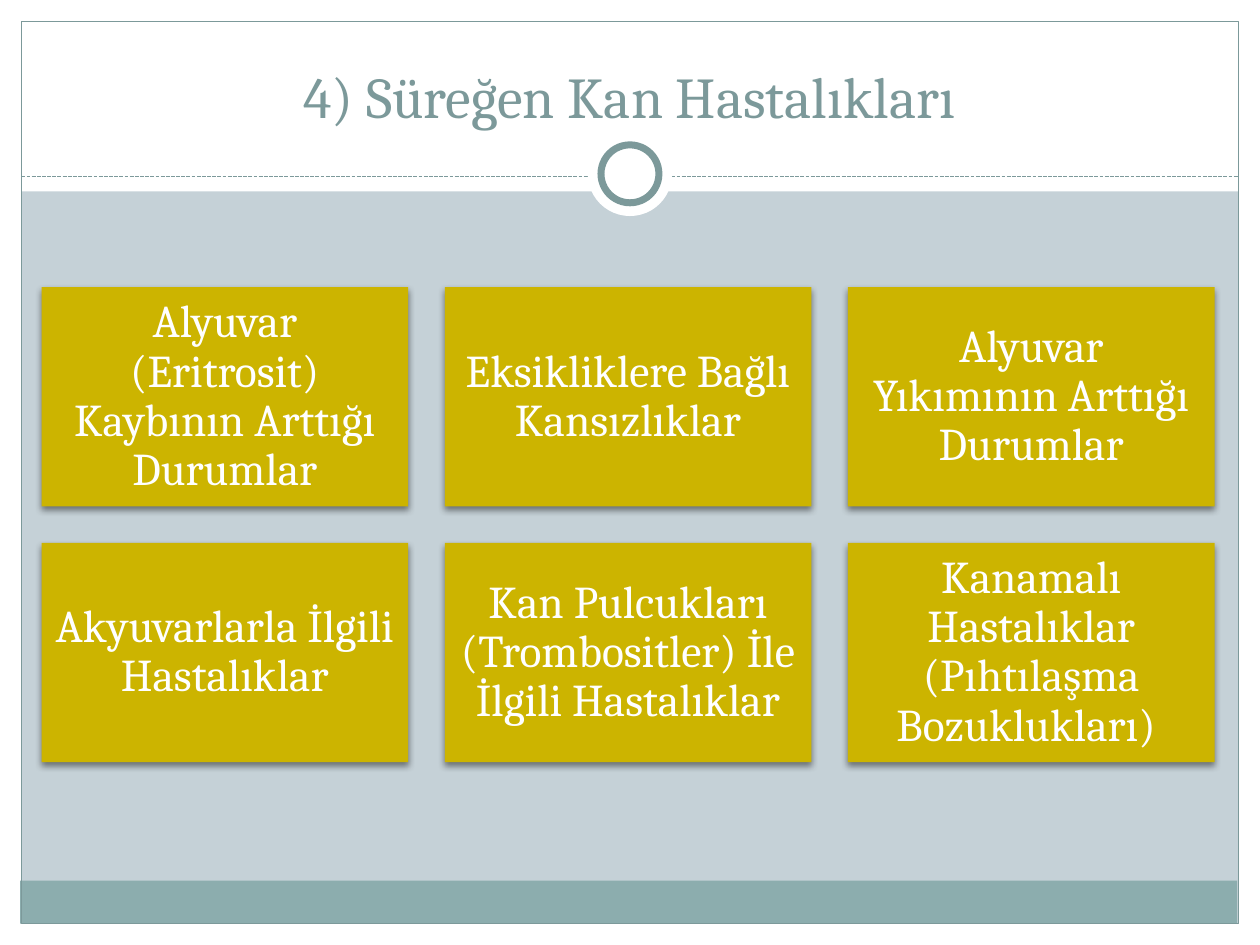
from lxml.etree import SubElement
from pptx import Presentation
from pptx.dml.color import RGBColor
from pptx.enum.dml import MSO_LINE
from pptx.enum.shapes import MSO_CONNECTOR, MSO_SHAPE
from pptx.enum.text import MSO_ANCHOR, MSO_AUTO_SIZE, PP_ALIGN
from pptx.oxml.ns import qn
from pptx.util import Inches, Pt

TITLE = "4) Süreğen Kan Hastalıkları"
CARDS = [
    "Alyuvar (Eritrosit) Kaybının Arttığı Durumlar",
    "Eksikliklere Bağlı Kansızlıklar",
    "Alyuvar Yıkımının Arttığı Durumlar",
    "Akyuvarlarla İlgili Hastalıklar",
    "Kan Pulcukları (Trombositler) İle İlgili Hastalıklar",
    "Kanamalı Hastalıklar (Pıhtılaşma Bozuklukları) ",
]
FONT = "Cambria"
WHITE, TEAL, BAND, GOLD, BACKGROUND = "FFFFFF", "7C999A", "8CADAE", "CCB400", "C5D1D7"

WIDTH, HEIGHT, MARGIN = 10, 7.5, 0.17
INNER_WIDTH = WIDTH - 2 * MARGIN
RULE_Y = 1.4
COLUMNS = 3
CARD_WIDTH, CARD_HEIGHT, CARD_GAP = 2.91, 1.74, 0.29
CARDS_LEFT, CARDS_TOP = 0.33, 2.28

WHITE_EDGES = [
    (0, HEIGHT - MARGIN, WIDTH, MARGIN),
    (0, 0, WIDTH, 1.52),
    (0, 0, MARGIN, HEIGHT),
    (WIDTH - MARGIN, 0, MARGIN, HEIGHT),
]


def color(hex_code):
    return RGBColor.from_string(hex_code)


def add_box(slide, kind, place, fill=None, line=None, line_width=0.75):
    box = slide.shapes.add_shape(kind, *map(Inches, place))
    box.shadow.inherit = False
    if fill:
        box.fill.solid()
        box.fill.fore_color.rgb = color(fill)
    else:
        box.fill.background()
    if line:
        box.line.color.rgb = color(line)
        box.line.width = Pt(line_width)
    else:
        box.line.fill.background()
    return box


def add_circle(slide, diameter, **style):
    """Centre a circle on the slide's width, just above the dashed rule."""
    left, top = (WIDTH - diameter) / 2, RULE_Y - 0.02 - diameter / 2
    return add_box(slide, MSO_SHAPE.OVAL, (left, top, diameter, diameter), **style)


def add_rule(slide):
    rule = slide.shapes.add_connector(
        MSO_CONNECTOR.STRAIGHT, Inches(MARGIN), Inches(RULE_Y),
        Inches(WIDTH - MARGIN), Inches(RULE_Y))
    rule.line.color.rgb = color(TEAL)
    rule.line.width = Pt(0.75)
    rule.line.dash_style = MSO_LINE.SQUARE_DOT
    SubElement(rule.element.spPr, qn("a:effectLst"))


def drop_shadow(box):
    effects = box.element.spPr.find(qn("a:effectLst"))
    shadow = SubElement(effects, qn("a:outerShdw"), blurRad=str(Pt(4)),
                        dist=str(Pt(2)), dir="5400000", rotWithShape="0")
    black = SubElement(shadow, qn("a:srgbClr"), val="000000")
    SubElement(black, qn("a:alpha"), val="45000")


def write(shape, text, size, ink, anchor, inset=None, spacing=None):
    frame = shape.text_frame
    frame.word_wrap = True
    frame.auto_size = MSO_AUTO_SIZE.NONE
    frame.vertical_anchor = anchor
    if inset is not None:
        frame.margin_left = frame.margin_right = Inches(inset)
        frame.margin_top = frame.margin_bottom = Inches(inset)
    para = frame.paragraphs[0]
    para.alignment = PP_ALIGN.CENTER
    para.line_spacing = spacing
    span = para.add_run()
    span.text = text
    span.font.size = Pt(size)
    span.font.name = FONT
    span.font.color.rgb = color(ink)


def add_frame(slide):
    for place in WHITE_EDGES:
        add_box(slide, MSO_SHAPE.RECTANGLE, place, fill=WHITE)
    add_box(slide, MSO_SHAPE.RECTANGLE, (0.16, 6.99, INNER_WIDTH, 0.34), fill=BAND)
    add_box(slide, MSO_SHAPE.RECTANGLE,
            (MARGIN, MARGIN, INNER_WIDTH, HEIGHT - 2 * MARGIN), line=TEAL)
    add_rule(slide)
    add_circle(slide, 0.67, fill=WHITE)
    add_circle(slide, 0.46, fill=WHITE, line=TEAL, line_width=4)


def add_title(slide):
    title = slide.shapes.title
    title.left, title.top, title.width, title.height = map(
        Inches, (0.33, 0.25, 9.33, 0.83))
    write(title, TITLE, 33, TEAL, MSO_ANCHOR.BOTTOM)
    title.element.getparent().append(title.element)  # in front of the white band


def add_cards(slide):
    for index, text in enumerate(CARDS):
        row, column = divmod(index, COLUMNS)
        left = CARDS_LEFT + column * (CARD_WIDTH + CARD_GAP)
        top = CARDS_TOP + row * (CARD_HEIGHT + CARD_GAP)
        card = add_box(slide, MSO_SHAPE.RECTANGLE,
                       (left, top, CARD_WIDTH, CARD_HEIGHT), fill=GOLD)
        drop_shadow(card)
        write(card, text, 26, WHITE, MSO_ANCHOR.MIDDLE, inset=0.11, spacing=0.9)


def main():
    deck = Presentation()
    deck.slide_width, deck.slide_height = Inches(WIDTH), Inches(HEIGHT)
    page = deck.slides.add_slide(deck.slide_layouts[5])
    page.background.fill.solid()
    page.background.fill.fore_color.rgb = color(BACKGROUND)
    add_frame(page)
    add_title(page)
    add_cards(page)
    deck.save("out.pptx")


if __name__ == "__main__":
    main()
